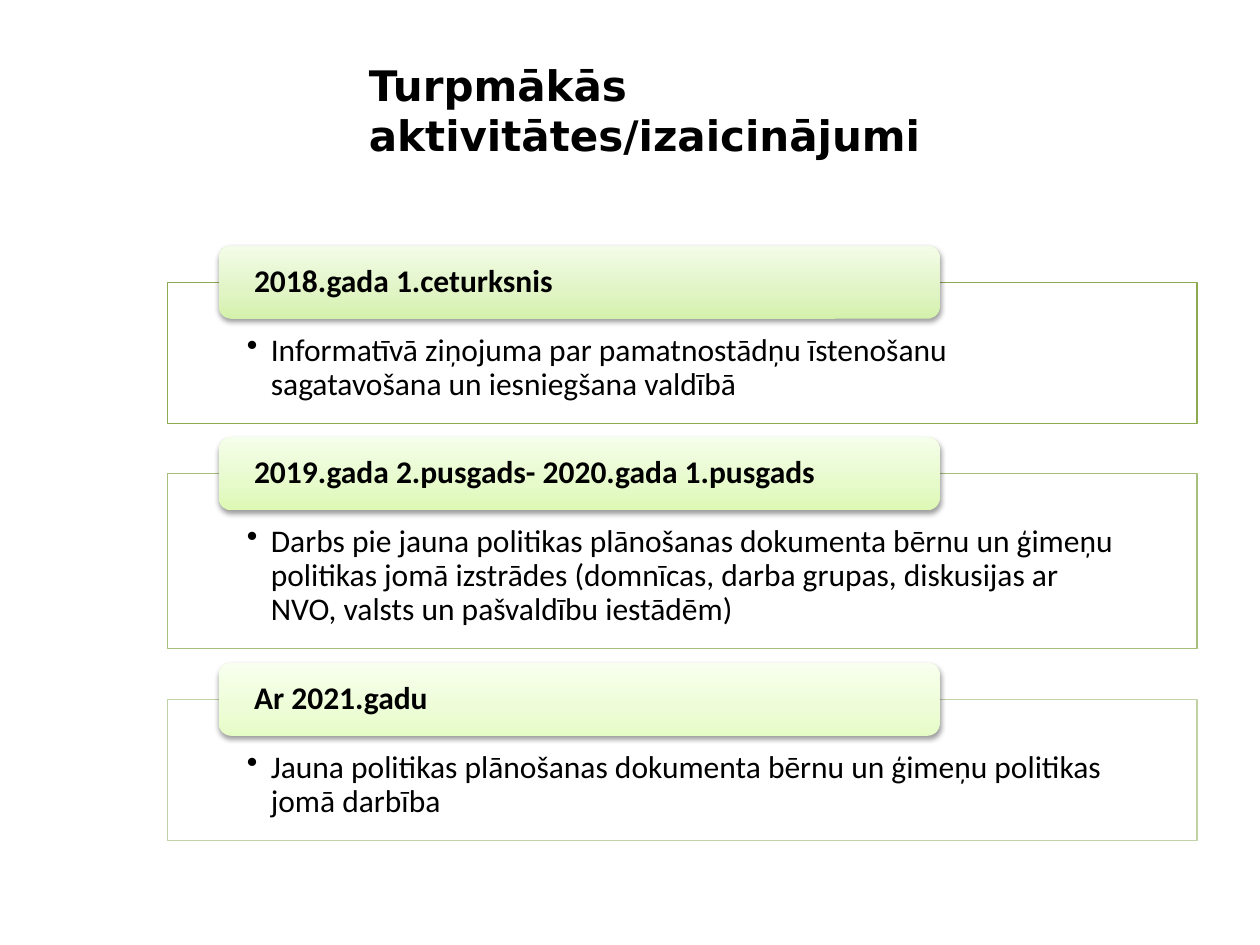
from pptx import Presentation
from pptx.dml.color import RGBColor
from pptx.enum.shapes import MSO_SHAPE as Shape
from pptx.enum.text import MSO_ANCHOR as Anchor, PP_ALIGN as Align
from pptx.oxml import parse_xml
from pptx.oxml.ns import nsdecls, qn
from pptx.util import Inches, Pt

BLACK = RGBColor(0x00, 0x00, 0x00)
WHITE = RGBColor(0xFF, 0xFF, 0xFF)

TITLE_FONT = {"name": "DejaVu Sans", "size": Pt(24), "bold": True}
TAB_FONT = {"name": "Calibri", "size": Pt(18), "bold": True}
BODY_FONT = {"name": "Calibri", "size": Pt(18), "bold": False}

PANEL_GAP = 0.4
TAB_RISE = 0.29

# Period, task, panel height, line colour, tab gradient from bottom to top
STAGES = [
    ("2018.gada 1.ceturksnis",
     "Informatīvā ziņojuma par pamatnostādņu īstenošanu sagatavošana un "
     "iesniegšana valdībā",
     1.12, RGBColor(0x8D, 0xAA, 0x51),
     [RGBColor(0xD4, 0xF1, 0xAB), RGBColor(0xE0, 0xF4, 0xC4), RGBColor(0xF3, 0xFC, 0xE8)]),
    ("2019.gada 2.pusgads- 2020.gada 1.pusgads",
     "Darbs pie jauna politikas plānošanas dokumenta bērnu un ģimeņu politikas "
     "jomā izstrādes (domnīcas, darba grupas, diskusijas ar NVO, valsts un "
     "pašvaldību iestādēm)",
     1.39, RGBColor(0xA6, 0xBF, 0x7A),
     [RGBColor(0xDD, 0xF9, 0xB4), RGBColor(0xE6, 0xFA, 0xCA), RGBColor(0xF5, 0xFE, 0xEA)]),
    ("Ar 2021.gadu",
     "Jauna politikas plānošanas dokumenta bērnu un ģimeņu politikas jomā darbība",
     1.12, RGBColor(0xC1, 0xD3, 0xA5),
     [RGBColor(0xE6, 0xFC, 0xC6), RGBColor(0xED, 0xFD, 0xD6), RGBColor(0xF8, 0xFF, 0xEE)]),
]


def write_text(shape, text, font, insets, anchor=Anchor.TOP, line_spacing=1.0, bullet=False):
    """Fill a shape with one left-aligned paragraph."""
    frame = shape.text_frame
    left, top, right, bottom = (Inches(inset) for inset in insets)
    settings = {"word_wrap": True, "vertical_anchor": anchor, "margin_left": left,
                "margin_top": top, "margin_right": right, "margin_bottom": bottom}
    for name, value in settings.items():
        setattr(frame, name, value)
    paragraph = frame.paragraphs[0]
    paragraph.text = text
    paragraph.alignment = Align.LEFT
    paragraph.line_spacing = line_spacing
    if bullet:
        properties = paragraph._p.get_or_add_pPr()
        properties.set("marL", str(Inches(0.19)))
        properties.set("indent", str(-Inches(0.19)))
        properties.append(parse_xml(f'<a:buChar {nsdecls("a")} char="•"/>'))
    run_font = paragraph.runs[0].font
    for name, value in font.items():
        setattr(run_font, name, value)
    run_font.color.rgb = BLACK


def fill_gradient(shape, colors):
    """Run three colours from the bottom edge to the top edge."""
    stops = "".join(
        f'<a:gs pos="{position * 1000}"><a:srgbClr val="{color}"/></a:gs>'
        for position, color in zip((0, 35, 100), colors))
    gradient = parse_xml(
        f'<a:gradFill {nsdecls("a")} rotWithShape="1"><a:gsLst>{stops}</a:gsLst>'
        '<a:lin ang="16200000" scaled="0"/></a:gradFill>')
    shape._element.spPr.find(qn("a:prstGeom")).addnext(gradient)


def add_soft_shadow(shape):
    shape._element.spPr.append(parse_xml(
        f'<a:effectLst {nsdecls("a")}><a:outerShdw blurRad="{Pt(3.1)}" dist="{Pt(1.6)}" '
        'dir="5400000" rotWithShape="0"><a:srgbClr val="000000"><a:alpha val="38000"/>'
        '</a:srgbClr></a:outerShdw></a:effectLst>'))


def add_title(slide, left, top, width, height):
    title = slide.shapes.add_textbox(Inches(left), Inches(top), Inches(width), Inches(height))
    write_text(title, "Turpmākās aktivitātes/izaicinājumi", TITLE_FONT, (0.1, 0.05, 0.1, 0.05))


def add_stage(slide, left, top, width, height, period, task, line_color, gradient):
    # Outlined panel with the task
    panel = slide.shapes.add_shape(
        Shape.RECTANGLE, Inches(left), Inches(top), Inches(width), Inches(height))
    panel.shadow.inherit = False
    panel.fill.solid()
    panel.fill.fore_color.rgb = WHITE
    panel.fill._xPr.find(qn("a:solidFill"))[0].append(
        parse_xml(f'<a:alpha {nsdecls("a")} val="90000"/>'))
    panel.line.color.rgb = line_color
    panel.line.width = Pt(0.75)
    write_text(panel, task, BODY_FONT, (0.63, 0.41, 0.63, 0.14), line_spacing=0.9, bullet=True)

    # Tab with the period, lying across the panel's top edge
    tab = slide.shapes.add_shape(
        Shape.ROUNDED_RECTANGLE, Inches(left + 0.05 * width), Inches(top - TAB_RISE),
        Inches(0.7 * width), Inches(2 * TAB_RISE))
    fill_gradient(tab, gradient)
    tab.line.fill.background()
    add_soft_shadow(tab)
    write_text(tab, period, TAB_FONT, (0.25, 0, 0.25, 0), Anchor.MIDDLE, 0.9)


def add_stages(slide, left, top, width):
    for period, task, height, line_color, gradient in STAGES:
        add_stage(slide, left, top, width, height, period, task, line_color, gradient)
        top += height + PANEL_GAP


def main():
    presentation = Presentation()
    presentation.slide_width = Inches(10)
    presentation.slide_height = Inches(7.5)
    slide = presentation.slides.add_slide(presentation.slide_layouts[6])
    add_title(slide, 2.83, 0.42, 6.67, 1.13)
    add_stages(slide, 1.33, 2.24, 8.17)
    presentation.save("out.pptx")


if __name__ == "__main__":
    main()
